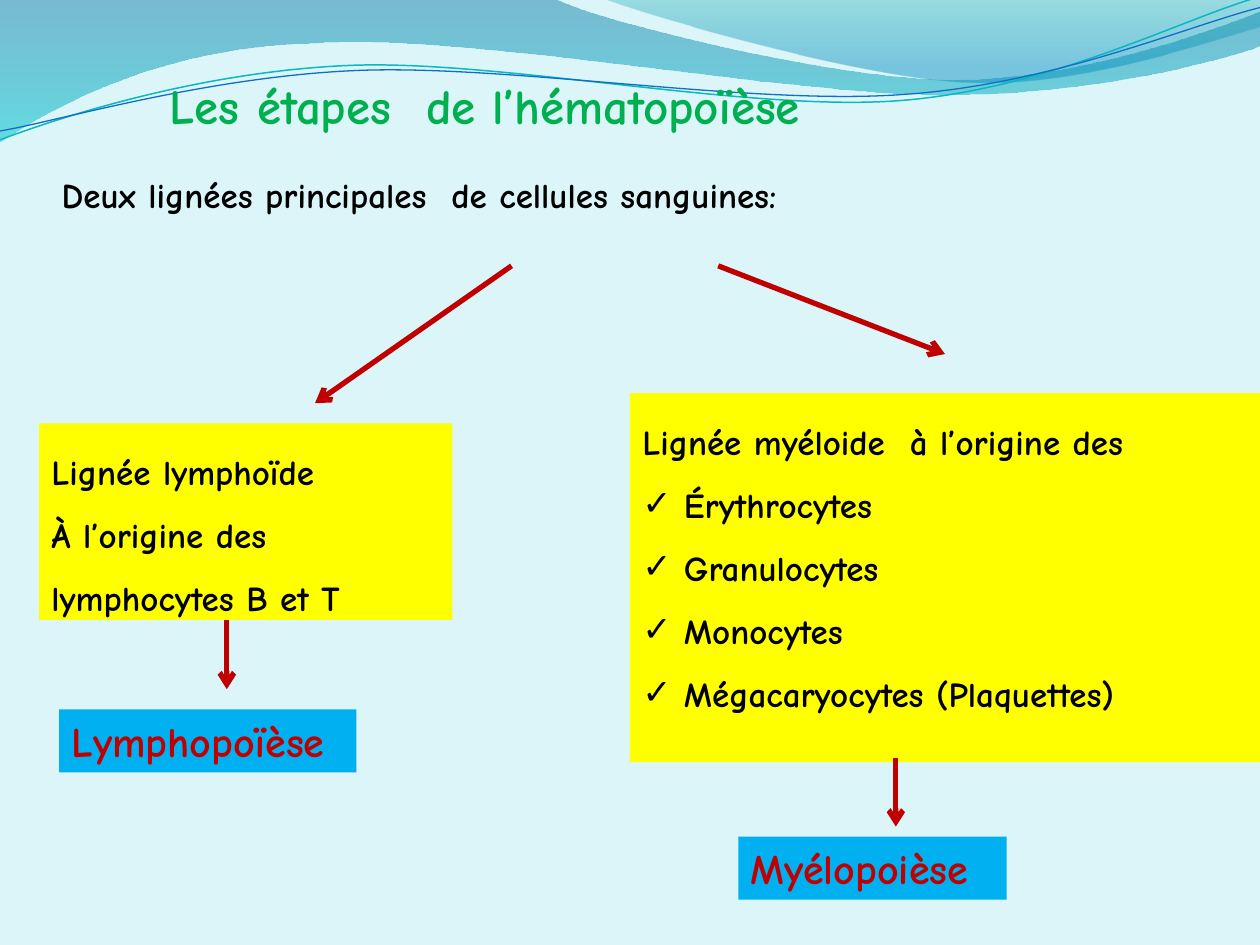
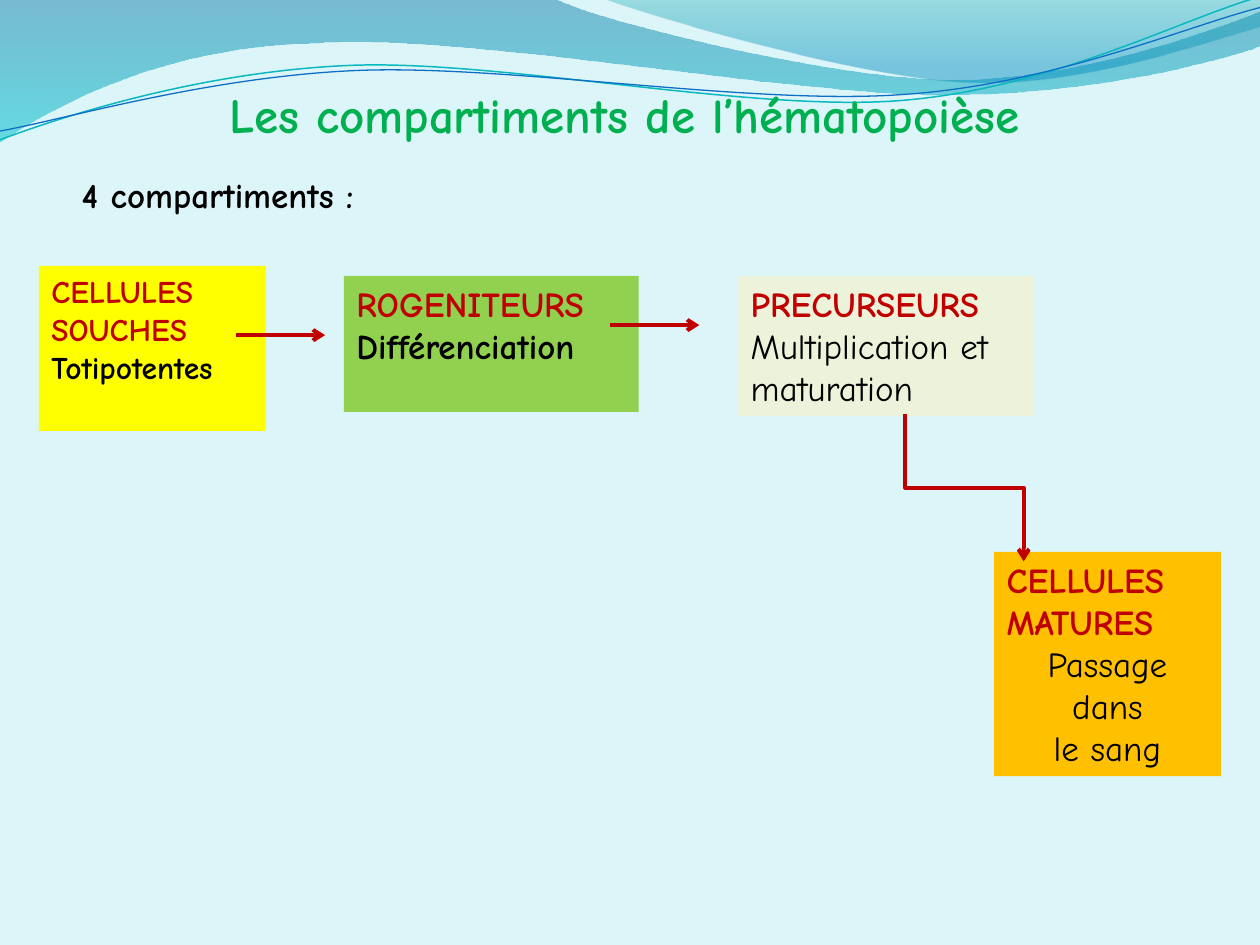
from dataclasses import dataclass
from typing import Optional

from lxml.etree import SubElement
from pptx import Presentation
from pptx.dml.color import RGBColor
from pptx.enum.shapes import MSO_CONNECTOR
from pptx.enum.text import MSO_ANCHOR, PP_ALIGN
from pptx.oxml.ns import qn
from pptx.util import Emu, Pt

EMU_PER_PX = 9144
SLIDE_WIDTH, SLIDE_HEIGHT = 1000, 750
BULLET_INDENT = 33
FONT = "Comic Neue"

BACKGROUND = "DBF5F9"
GREEN = "00B050"
RED = "C00000"
BLACK = "000000"
YELLOW = "FFFF00"
BLUE = "00B0F0"
LIME = "92D050"
CREAM = "EDF3DB"
ORANGE = "FFC000"


@dataclass(frozen=True)
class GradientStop:
    position: float
    color: str
    opacity: int


@dataclass(frozen=True)
class Wave:
    start: tuple[int, int]
    steps: tuple[tuple[int, ...], ...]
    gradient: tuple[GradientStop, ...] = ()
    line_color: str = ""
    line_width: float = 0


@dataclass(frozen=True)
class Line:
    text: str
    color: str = BLACK
    bold: bool = True
    bullet: bool = False
    centered: bool = False


@dataclass(frozen=True)
class Box:
    left: int
    top: int
    width: int
    height: int
    lines: tuple[Line, ...]
    size: int = 20
    fill: Optional[str] = None
    spacing: float = 1.0


@dataclass(frozen=True)
class Arrow:
    start: tuple[int, int]
    end: tuple[int, int]
    width: float
    kind: MSO_CONNECTOR = MSO_CONNECTOR.STRAIGHT
    rotation: int = 0


WAVES = (
    Wave(
        (0, 0),
        (
            (440, -1),
            (476, 17, 664, 63, 758, 63),
            (853, 63, 958, 26, 1000, 9),
            (1001, 36),
            (983, 44, 870, 76, 746, 75),
            (622, 75, 382, 28, 257, 34),
            (129, 36, 46, 83, -1, 113),
        ),
        gradient=(GradientStop(0, "0074A1", 45), GradientStop(1, "00C6CF", 55)),
    ),
    Wave(
        (479, -1),
        (
            (509, 11, 682, 62, 769, 65),
            (856, 69, 961, 32, 1000, 21),
            (1000, 0),
        ),
        gradient=(GradientStop(0, "00A1A9", 30), GradientStop(0.8, "008BBF", 45)),
    ),
    Wave(
        (0, 111),
        (
            (48, 93, 158, 57, 277, 52),
            (395, 47, 593, 89, 713, 80),
            (833, 71, 938, 15, 998, -2),
        ),
        line_color="0AB8BF",
        line_width=0.85,
    ),
    Wave(
        (0, 104),
        (
            (47, 96, 164, 61, 283, 56),
            (403, 51, 597, 84, 717, 75),
            (836, 67, 941, 21, 1000, 6),
        ),
        line_color="0F6FC6",
        line_width=0.75,
    ),
)

STAGES_BOXES = (
    Box(125, 55, 594, 57, (Line("Les étapes  de l’hématopoïèse", GREEN),), 28),
    Box(39, 133, 922, 44, (Line("Deux lignées principales  de cellules sanguines:"),)),
    Box(
        31, 336, 328, 156,
        (Line("Lignée lymphoïde"), Line("À l’origine des"), Line("lymphocytes B et T")),
        fill=YELLOW, spacing=1.5,
    ),
    Box(
        500, 312, 500, 293,
        (
            Line("Lignée myéloide  à l’origine des"),
            Line("Érythrocytes", bullet=True),
            Line("Granulocytes", bullet=True),
            Line("Monocytes", bullet=True),
            Line("Mégacaryocytes (Plaquettes)", bullet=True),
        ),
        fill=YELLOW, spacing=1.5,
    ),
    Box(47, 563, 236, 50, (Line("Lymphopoïèse", RED),), 24, BLUE),
    Box(586, 664, 213, 50, (Line("Myélopoièse", RED),), 24, BLUE),
)
STAGES_ARROWS = (
    Arrow((570, 211), (750, 281), 3),
    Arrow((406, 211), (250, 320), 3),
    Arrow((180, 492), (180, 547), 3),
    Arrow((711, 602), (711, 656), 3),
)

COMPARTMENTS_BOXES = (
    Box(172, 62, 724, 57, (Line("Les compartiments de l’hématopoièse", GREEN),), 28),
    Box(55, 133, 269, 44, (Line("4 compartiments :"),)),
    Box(
        31, 211, 180, 131,
        (Line("CELLULES", RED), Line("SOUCHES", RED), Line("Totipotentes")),
        18, YELLOW,
    ),
    Box(
        273, 219, 234, 108,
        (Line("ROGENITEURS", RED), Line("Différenciation")),
        fill=LIME,
    ),
    Box(
        586, 219, 234, 111,
        (
            Line("PRECURSEURS", RED),
            Line("Multiplication et", bold=False),
            Line("maturation", bold=False),
        ),
        fill=CREAM,
    ),
    Box(
        789, 438, 180, 178,
        (
            Line("CELLULES", RED),
            Line("MATURES", RED),
            Line("Passage\vdans", bold=False, centered=True),
            Line("le sang", bold=False, centered=True),
        ),
        fill=ORANGE,
    ),
)
COMPARTMENTS_ARROWS = (
    Arrow((187, 266), (258, 266), 2.25),
    Arrow((484, 258), (555, 258), 2.25),
    Arrow((824, 340), (707, 434), 2.25, MSO_CONNECTOR.ELBOW, 270),
)


def px(length: float) -> Emu:
    return Emu(round(length * EMU_PER_PX))


def rgb(color: str) -> RGBColor:
    return RGBColor.from_string(color)


def bend(shape, wave: Wave) -> None:
    segments = list(shape.element.spPr.iter(qn("a:lnTo")))
    for segment, step in zip(segments, wave.steps):
        if len(step) == 2:
            continue
        segment.tag = qn("a:cubicBezTo")
        end = segment[0]
        for x, y in (step[:2], step[2:4]):
            control = SubElement(segment, qn("a:pt"))
            control.set("x", str(px(x) - shape.left))
            control.set("y", str(px(y) - shape.top))
        segment.append(end)


def draw_wave(slide, wave: Wave) -> None:
    builder = slide.shapes.build_freeform(px(wave.start[0]), px(wave.start[1]))
    ends = [(px(step[-2]), px(step[-1])) for step in wave.steps]
    builder.add_line_segments(ends, close=bool(wave.gradient))
    shape = builder.convert_to_shape()
    bend(shape, wave)
    shape.shadow.inherit = False
    if not wave.gradient:
        shape.fill.background()
        shape.line.color.rgb = rgb(wave.line_color)
        shape.line.width = Pt(wave.line_width)
        return
    shape.line.fill.background()
    shape.fill.gradient()
    shape.fill.gradient_angle = 270
    for stop, wanted in zip(shape.fill.gradient_stops, wave.gradient):
        stop.position = wanted.position
        stop.color.rgb = rgb(wanted.color)
    for color, wanted in zip(shape.element.spPr.iter(qn("a:srgbClr")), wave.gradient):
        SubElement(color, qn("a:alpha"), val=str(wanted.opacity * 1000))


def draw_box(slide, box: Box) -> None:
    shape = slide.shapes.add_textbox(px(box.left), px(box.top), px(box.width), px(box.height))
    if box.fill:
        shape.fill.solid()
        shape.fill.fore_color.rgb = rgb(box.fill)
    frame = shape.text_frame
    frame.word_wrap = True
    frame.vertical_anchor = MSO_ANCHOR.TOP
    for index, line in enumerate(box.lines):
        paragraph = frame.add_paragraph() if index else frame.paragraphs[0]
        paragraph.text = line.text
        paragraph.line_spacing = box.spacing
        paragraph.alignment = PP_ALIGN.CENTER if line.centered else PP_ALIGN.LEFT
        if line.bullet:
            properties = paragraph._p.get_or_add_pPr()
            properties.set("marL", str(px(BULLET_INDENT)))
            properties.set("indent", str(-px(BULLET_INDENT)))
            SubElement(properties, qn("a:buFont"), typeface=FONT)
            SubElement(properties, qn("a:buChar"), char="✓")
        paragraph.font.name = FONT
        paragraph.font.size = Pt(box.size)
        paragraph.font.bold = line.bold
        paragraph.font.color.rgb = rgb(line.color)


def draw_arrow(slide, arrow: Arrow) -> None:
    ends = [px(length) for length in arrow.start + arrow.end]
    connector = slide.shapes.add_connector(arrow.kind, *ends)
    connector.line.color.rgb = rgb(RED)
    connector.line.width = Pt(arrow.width)
    properties = connector.element.spPr
    SubElement(properties.find(qn("a:ln")), qn("a:tailEnd"), type="arrow")
    SubElement(properties, qn("a:effectLst"))
    if arrow.rotation:
        properties.find(qn("a:xfrm")).set("rot", str(arrow.rotation * 60000))


def add_slide(presentation, boxes: tuple[Box, ...], arrows: tuple[Arrow, ...]) -> None:
    slide = presentation.slides.add_slide(presentation.slide_layouts[6])
    slide.background.fill.solid()
    slide.background.fill.fore_color.rgb = rgb(BACKGROUND)
    for wave in WAVES:
        draw_wave(slide, wave)
    for box in boxes:
        draw_box(slide, box)
    for arrow in arrows:
        draw_arrow(slide, arrow)


def main() -> None:
    presentation = Presentation()
    presentation.slide_width = px(SLIDE_WIDTH)
    presentation.slide_height = px(SLIDE_HEIGHT)
    add_slide(presentation, STAGES_BOXES, STAGES_ARROWS)
    add_slide(presentation, COMPARTMENTS_BOXES, COMPARTMENTS_ARROWS)
    presentation.save("out.pptx")


if __name__ == "__main__":
    main()
